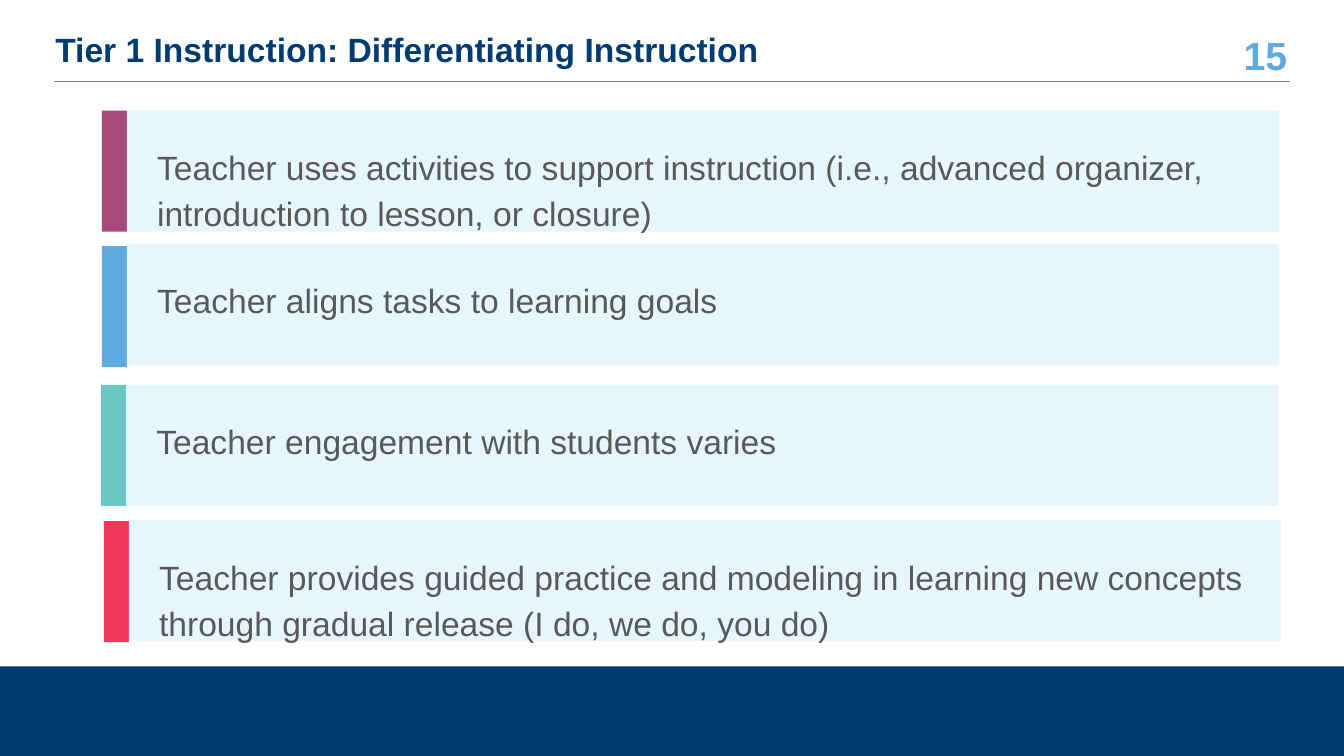
from lxml.etree import SubElement
from pptx import Presentation
from pptx.dml.color import RGBColor
from pptx.enum.shapes import MSO_CONNECTOR, MSO_SHAPE
from pptx.enum.text import MSO_ANCHOR, MSO_AUTO_SIZE, PP_ALIGN
from pptx.oxml.ns import qn
from pptx.util import Cm, Pt

COLORS = {
    "navy": "003B71", "blue": "5FAADE", "plum": "A74A7A", "teal": "69C8C3",
    "red": "EF3A5B", "pale": "E7F6FD", "text": "595959", "rule": "808080",
}
SLIDE_WIDTH, SLIDE_HEIGHT = 33.87, 19.05
CARD_WIDTH, CARD_HEIGHT, CARD_INSET = 29.03, 3.05, 0.76
STRIP_WIDTH = 0.63

# Card left, card top, strip top, strip colour, statement
PRACTICES = [
    (3.2, 2.79, 2.79, "plum",
     "Teacher uses activities to support instruction (i.e., advanced organizer, "
     "introduction to lesson, or closure)"),
    (3.2, 6.15, 6.2, "blue", "Teacher aligns tasks to learning goals"),
    (3.18, 9.7, 9.7, "teal", "Teacher engagement with students varies"),
    (3.25, 13.11, 13.13, "red",
     "Teacher provides guided practice and modeling in learning new concepts "
     "through gradual release (I do, we do, you do)"),
]


def color(name):
    return RGBColor.from_string(COLORS[name])


def set_attributes(target, values):
    for name, value in values.items():
        setattr(target, name, value)


def place(shape, box):
    names = ("left", "top", "width", "height")
    set_attributes(shape, {name: Cm(length) for name, length in zip(names, box)})


def write(shape, text, size, color_name, bold=False, frame=None, paragraph_format=None):
    """Fill the shape with one formatted paragraph."""
    text_frame = shape.text_frame
    set_attributes(text_frame, {"word_wrap": True, "auto_size": MSO_AUTO_SIZE.NONE,
                                **(frame or {})})
    paragraph = text_frame.paragraphs[0]
    set_attributes(paragraph, paragraph_format or {})
    run = paragraph.add_run()
    run.text = text
    set_attributes(run.font, {"name": "Arial", "size": Pt(size), "bold": bold})
    run.font.color.rgb = color(color_name)


def add_rectangle(slide, box, color_name):
    shape = slide.shapes.add_shape(MSO_SHAPE.RECTANGLE, *map(Cm, box))
    shape.shadow.inherit = False
    shape.fill.solid()
    shape.fill.fore_color.rgb = color(color_name)
    shape.line.fill.background()
    return shape


def add_header(slide, box, title, number):
    """Place the title, the slide number and the rule below them."""
    left, top, width, height = box
    middle = {"vertical_anchor": MSO_ANCHOR.MIDDLE}
    place(slide.shapes.title, (left - 0.23, top, 29.46, 1.07))
    write(slide.shapes.title, title, 24, "navy", True, middle,
          {"alignment": PP_ALIGN.LEFT, "line_spacing": 0.9})

    number_box = slide.shapes.add_textbox(
        *map(Cm, (left + width - 1.85, top + 0.08, 2.03, 1.07)))
    write(number_box, number, 28, "blue", True, middle, {"alignment": PP_ALIGN.RIGHT})

    bottom = top + height
    rule = slide.shapes.add_connector(
        MSO_CONNECTOR.STRAIGHT, Cm(left), Cm(bottom), Cm(left + width), Cm(bottom))
    rule.line.color.rgb = color("rule")
    rule.line.width = Pt(0.5)
    SubElement(rule._element.spPr, qn("a:effectLst"))


def add_practice(slide, box, strip_top, strip_color, statement):
    """Place a pale card with a coloured strip along its left side."""
    left, top, width, height = box
    add_rectangle(slide, (left - STRIP_WIDTH, strip_top, STRIP_WIDTH, height), strip_color)
    card = add_rectangle(slide, box, "pale")
    frame = {f"margin_{side}": Cm(CARD_INSET) for side in ("left", "top", "right", "bottom")}
    frame["vertical_anchor"] = MSO_ANCHOR.TOP
    write(card, statement, 24, "text", frame=frame, paragraph_format={
        "alignment": PP_ALIGN.LEFT, "line_spacing": 1.15, "space_after": Pt(16)})


def main():
    presentation = Presentation()
    presentation.slide_width = Cm(SLIDE_WIDTH)
    presentation.slide_height = Cm(SLIDE_HEIGHT)
    slide = presentation.slides.add_slide(
        presentation.slide_layouts.get_by_name("Title Only"))

    footer_top = 16.79
    add_rectangle(slide, (0, footer_top, SLIDE_WIDTH, SLIDE_HEIGHT - footer_top), "navy")
    add_header(slide, (1.37, 0.76, 31.14, 1.28),
               "Tier 1 Instruction: Differentiating Instruction", "15")
    for left, top, strip_top, strip_color, statement in PRACTICES:
        add_practice(slide, (left, top, CARD_WIDTH, CARD_HEIGHT),
                     strip_top, strip_color, statement)
    presentation.save("out.pptx")


if __name__ == "__main__":
    main()
